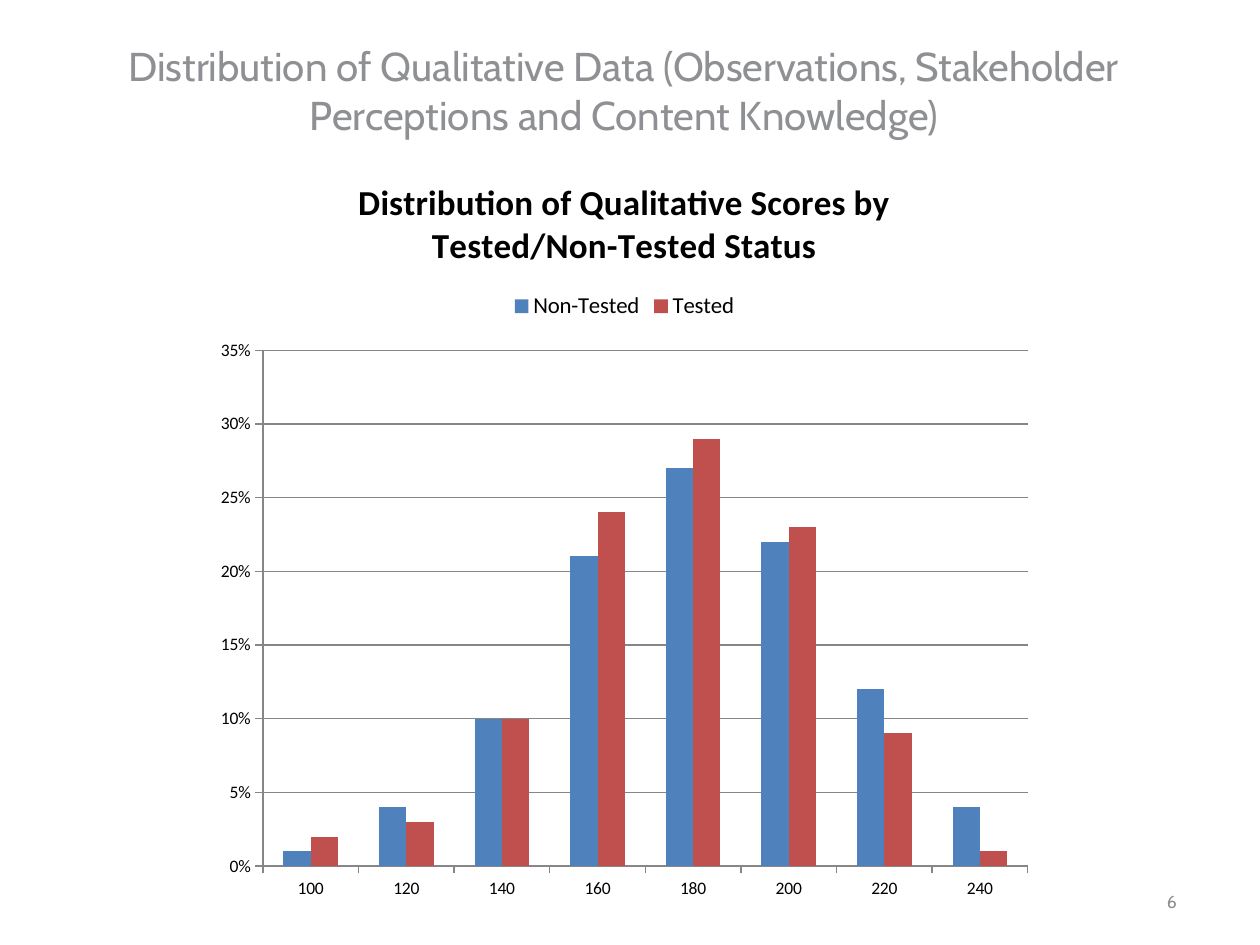
import pptx
import pptx.chart.data
import pptx.dml.color
import pptx.enum.chart
import pptx.enum.text
import pptx.util

SLIDE_WIDTH, SLIDE_HEIGHT = 10, 7.5
HEADING_FONT, CHART_FONT = "Cabin", "Calibri"
CATEGORIES = ["100", "120", "140", "160", "180", "200", "220", "240"]
SERIES = [
    ("Non-Tested", "4F81BD", [0.01, 0.04, 0.10, 0.21, 0.27, 0.22, 0.12, 0.04]),
    ("Tested", "C0504D", [0.02, 0.03, 0.10, 0.24, 0.29, 0.23, 0.09, 0.01]),
]


def color(value):
    return pptx.dml.color.RGBColor.from_string(value)


def inches(box):
    return [pptx.util.Inches(length) for length in box]


def set_font(font, name, size, hex_color, bold=False):
    font.name, font.size, font.bold = name, pptx.util.Pt(size), bold
    font.color.rgb = color(hex_color)


def place_text(shape, box, text, size, hex_color, alignment, anchor):
    shape.left, shape.top, shape.width, shape.height = inches(box)
    frame = shape.text_frame
    frame.text = text
    frame.word_wrap = True
    frame.auto_size = pptx.enum.text.MSO_AUTO_SIZE.NONE
    frame.vertical_anchor = anchor
    frame.margin_left = frame.margin_right = frame.margin_top = frame.margin_bottom = 0
    paragraph = frame.paragraphs[0]
    paragraph.alignment = alignment
    set_font(paragraph.runs[0].font, HEADING_FONT, size, hex_color)


def style_axis(axis):
    axis.major_tick_mark = pptx.enum.chart.XL_TICK_MARK.OUTSIDE
    axis.minor_tick_mark = pptx.enum.chart.XL_TICK_MARK.NONE
    axis.format.line.color.rgb = color("868686")
    set_font(axis.tick_labels.font, CHART_FONT, 10, "000000")


def add_score_chart(slide, box):
    data = pptx.chart.data.CategoryChartData(number_format="0%")
    data.categories = CATEGORIES
    for name, _, values in SERIES:
        data.add_series(name, values)
    chart = slide.shapes.add_chart(
        pptx.enum.chart.XL_CHART_TYPE.COLUMN_CLUSTERED, *inches(box), data).chart
    set_font(chart.font, CHART_FONT, 10, "000000")

    # Columns
    plot = chart.plots[0]
    plot.gap_width, plot.overlap = 150, 0
    plot.vary_by_categories = False
    for series, (_, hex_color, _) in zip(plot.series, SERIES):
        series.format.fill.solid()
        series.format.fill.fore_color.rgb = color(hex_color)

    # Axes
    style_axis(chart.category_axis)
    value_axis = chart.value_axis
    style_axis(value_axis)
    value_axis.minimum_scale, value_axis.maximum_scale = 0, 0.35
    value_axis.major_unit = 0.05
    value_axis.tick_labels.number_format = "0%"
    value_axis.tick_labels.number_format_is_linked = False
    value_axis.major_gridlines.format.line.color.rgb = color("868686")

    # Title and legend
    chart.has_title = True
    title_frame = chart.chart_title.text_frame
    title_frame.text = "Distribution of Qualitative Scores by Tested/Non-Tested Status"
    set_font(title_frame.paragraphs[0].runs[0].font, CHART_FONT, 20, "000000", bold=True)
    chart.chart_title.include_in_layout = False
    chart.has_legend = True
    legend = chart.legend
    legend.position = pptx.enum.chart.XL_LEGEND_POSITION.TOP
    legend.include_in_layout = False
    set_font(legend.font, CHART_FONT, 13, "000000")


def build_slide(presentation):
    slide = presentation.slides.add_slide(presentation.slide_layouts[5])
    alignment, anchor = pptx.enum.text.PP_ALIGN, pptx.enum.text.MSO_ANCHOR

    # Heading
    place_text(slide.shapes.title, (0.83, 0.33, 8.25, 1.25),
               "Distribution of Qualitative Data (Observations, Stakeholder "
               "Perceptions and Content Knowledge)",
               23, "8F9094", alignment.CENTER, anchor.TOP)

    # Chart
    add_score_chart(slide, (1.62, 1.18, 6.67, 6.07))

    # Page number
    number_box = (7.01, 6.84, 2.33, 0.4)
    place_text(slide.shapes.add_textbox(*inches(number_box)), number_box, "6",
               10, "8C8C8C", alignment.RIGHT, anchor.BOTTOM)


def main():
    presentation = pptx.Presentation()
    presentation.slide_width, presentation.slide_height = inches((SLIDE_WIDTH, SLIDE_HEIGHT))
    build_slide(presentation)
    presentation.save("out.pptx")


if __name__ == "__main__":
    main()
